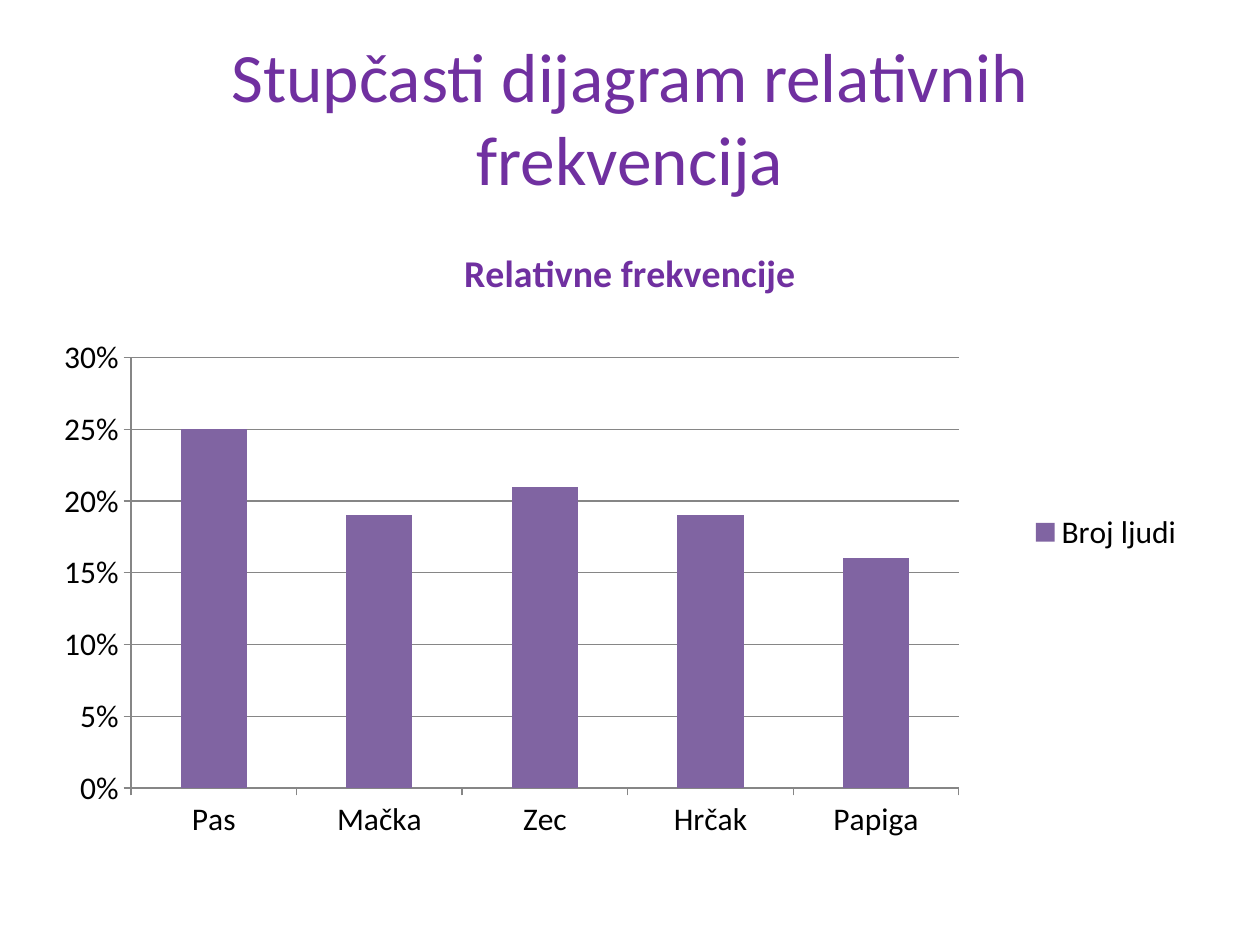
from lxml import etree
from pptx import Presentation
from pptx.chart.data import CategoryChartData
from pptx.dml.color import RGBColor
from pptx.enum.chart import XL_CHART_TYPE, XL_LEGEND_POSITION, XL_TICK_MARK
from pptx.enum.text import MSO_ANCHOR, PP_ALIGN
from pptx.oxml.ns import qn
from pptx.util import Inches, Pt

TITLE = "Stupčasti dijagram relativnih frekvencija"
CHART_TITLE = "Relativne frekvencije"
SERIES = "Broj ljudi"
FREQUENCIES = {"Pas": 0.25, "Mačka": 0.19, "Zec": 0.21, "Hrčak": 0.19, "Papiga": 0.16}
PLOT_AREA = {"x": 0.06, "y": 0.22, "w": 0.73, "h": 0.69}
COLORS = {"title": "7030A0", "bar": "8064A2", "text": "000000", "line": "868686"}
FONT = "Calibri"


def set_font(font, size, color):
    font.name = FONT
    font.size = Pt(size)
    font.color.rgb = RGBColor.from_string(COLORS[color])


def color_line(line):
    line.color.rgb = RGBColor.from_string(COLORS["line"])
    line.width = Pt(0.75)


def place_plot_area(chart):
    """Fix the inner plot area at fractions of the chart's size."""
    plot_area = chart.plots[0]._element.getparent()
    for old in plot_area.findall(qn("c:layout")):
        plot_area.remove(old)
    layout = etree.Element(qn("c:layout"))
    plot_area.insert(0, layout)
    manual = etree.SubElement(layout, qn("c:manualLayout"))
    settings = {"layoutTarget": "inner", "xMode": "edge", "yMode": "edge", **PLOT_AREA}
    for tag, value in settings.items():
        etree.SubElement(manual, qn(f"c:{tag}")).set("val", str(value))


def add_title(page):
    box = page.shapes.title
    box.left, box.top, box.width, box.height = map(Inches, (0.5, 0.3, 9, 1.25))
    box.text_frame.text = TITLE
    box.text_frame.word_wrap = True
    box.text_frame.vertical_anchor = MSO_ANCHOR.MIDDLE
    para = box.text_frame.paragraphs[0]
    para.alignment = PP_ALIGN.CENTER
    set_font(para.font, 39.6, "title")


def add_frequency_chart(page):
    data = CategoryChartData(number_format="0%")
    data.categories = list(FREQUENCIES)
    data.add_series(SERIES, list(FREQUENCIES.values()))
    chart = page.shapes.add_chart(
        XL_CHART_TYPE.COLUMN_CLUSTERED,
        Inches(0.5), Inches(1.75), Inches(9), Inches(4.95), data).chart
    set_font(chart.font, 18, "text")

    chart.has_title = True
    chart.chart_title.include_in_layout = False
    chart.chart_title.text_frame.text = CHART_TITLE
    heading = chart.chart_title.text_frame.paragraphs[0].font
    set_font(heading, 21.6, "title")
    heading.bold = True

    chart.has_legend = True
    chart.legend.position = XL_LEGEND_POSITION.RIGHT
    chart.legend.include_in_layout = False

    plot = chart.plots[0]
    plot.gap_width = 150
    plot.vary_by_categories = False
    fill = plot.series[0].format.fill
    fill.solid()
    fill.fore_color.rgb = RGBColor.from_string(COLORS["bar"])

    for axis in (chart.category_axis, chart.value_axis):
        axis.major_tick_mark = XL_TICK_MARK.OUTSIDE
        axis.minor_tick_mark = XL_TICK_MARK.NONE
        color_line(axis.format.line)
    values = chart.value_axis
    values.minimum_scale, values.maximum_scale, values.major_unit = 0, 0.3, 0.05
    values.tick_labels.number_format = "0%"
    values.tick_labels.number_format_is_linked = False
    values.has_major_gridlines = True
    color_line(values.major_gridlines.format.line)
    place_plot_area(chart)


def main():
    deck = Presentation()
    deck.slide_width, deck.slide_height = Inches(10), Inches(7.5)
    page = deck.slides.add_slide(deck.slide_layouts[5])
    add_title(page)
    add_frequency_chart(page)
    deck.save("out.pptx")


if __name__ == "__main__":
    main()
